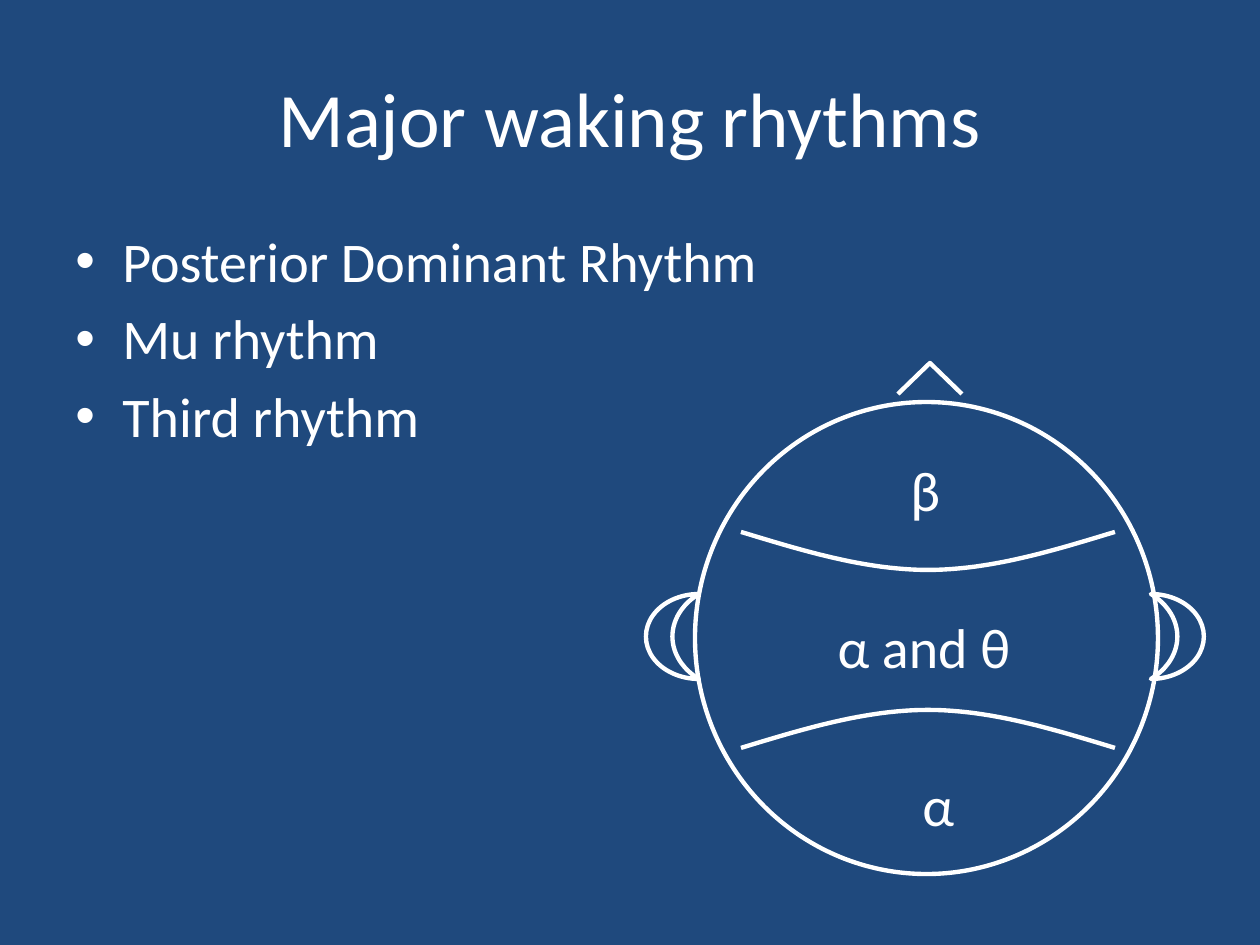
"""Build the slide on major waking rhythms with a head diagram."""
from pptx import Presentation
from pptx.dml.color import RGBColor
from pptx.enum.shapes import MSO_SHAPE
from pptx.enum.text import MSO_ANCHOR, PP_ALIGN
from pptx.oxml.ns import qn
from pptx.util import Pt
from lxml.etree import SubElement

COLORS = {"background": "1F497D", "ink": "FFFFFF"}
FONT = "Calibri"
TITLE = "Major waking rhythms"
RHYTHMS = ["Posterior Dominant Rhythm", "Mu rhythm", "Third rhythm"]
REGIONS = [
    ("β", (898, 449, 58, 79), {"wrap": False}),
    ("α", (910, 764, 58, 79), {"wrap": False}),
    ("α and θ", (809, 606, 230, 79), {"align": PP_ALIGN.CENTER}),
]
HEAD = (695, 402, 463, 472)
EARS = [((646, 594, 53, 85), False), ((1151, 594, 53, 85), True)]
NOSE = [(898, 394), (930, 363), (962, 394)]
CURVE_LEFT, CURVE_RIGHT, CURVE_DEPTH, CURVE_STEPS = 741, 1115, 38, 48
CURVES = [(748, -1), (532, 1)]

PX = 914400 // 126
INDENT = 47


def scaled(lengths):
    return [round(length * PX) for length in lengths]


def color(name):
    return RGBColor.from_string(COLORS[name])


def add_text(slide, lines, place, size=32, align=PP_ALIGN.LEFT,
             anchor=MSO_ANCHOR.TOP, wrap=True, bullet=None):
    box = slide.shapes.add_textbox(*scaled(place))
    frame = box.text_frame
    frame.word_wrap = wrap
    frame.vertical_anchor = anchor
    for index, line in enumerate(lines):
        para = frame.add_paragraph() if index else frame.paragraphs[0]
        para.alignment = align
        span = para.add_run()
        span.text = line
        span.font.name = FONT
        span.font.size = Pt(size)
        span.font.color.rgb = color("ink")
        if bullet:
            para.space_before = Pt(6)
            properties = para._p.get_or_add_pPr()
            properties.set("marL", str(INDENT * PX))
            properties.set("indent", str(-INDENT * PX))
            SubElement(properties, qn("a:buFont")).set("typeface", "Arial")
            SubElement(properties, qn("a:buChar")).set("char", bullet)


def outline(shape):
    shape.shadow.inherit = False
    shape.fill.background()
    shape.line.color.rgb = color("ink")
    shape.line.width = Pt(2.5)
    return shape


def add_path(slide, points):
    start, *rest = [scaled(point) for point in points]
    builder = slide.shapes.build_freeform(*start, scale=1)
    builder.add_line_segments(rest, close=False)
    outline(builder.convert_to_shape())


def curve_points(end_y, direction):
    points = []
    for step in range(CURVE_STEPS + 1):
        share = step / CURVE_STEPS
        inward = 1 - abs(2 * share - 1)
        bend = 1.5 * inward - 0.5 * inward ** 3
        points.append((CURVE_LEFT + share * (CURVE_RIGHT - CURVE_LEFT),
                       end_y + direction * CURVE_DEPTH * bend))
    return points


def main():
    deck = Presentation()
    deck.slide_width, deck.slide_height = scaled((1260, 945))
    slide = deck.slides.add_slide(deck.slide_layouts[6])
    slide.background.fill.solid()
    slide.background.fill.fore_color.rgb = color("background")

    add_text(slide, [TITLE], (63, 38, 1134, 157), size=44,
             align=PP_ALIGN.CENTER, anchor=MSO_ANCHOR.MIDDLE)
    add_text(slide, RHYTHMS, (63, 220, 1134, 624), bullet="•")

    for end_y, direction in CURVES:
        add_path(slide, curve_points(end_y, direction))
    outline(slide.shapes.add_shape(MSO_SHAPE.OVAL, *scaled(HEAD)))
    for label, place, style in REGIONS:
        add_text(slide, [label], place, **style)
    add_path(slide, NOSE)
    for place, flipped in EARS:
        ear = outline(slide.shapes.add_shape(MSO_SHAPE.MOON, *scaled(place)))
        if flipped:
            ear._element.spPr.xfrm.set("flipH", "1")

    deck.save("out.pptx")


if __name__ == "__main__":
    main()
